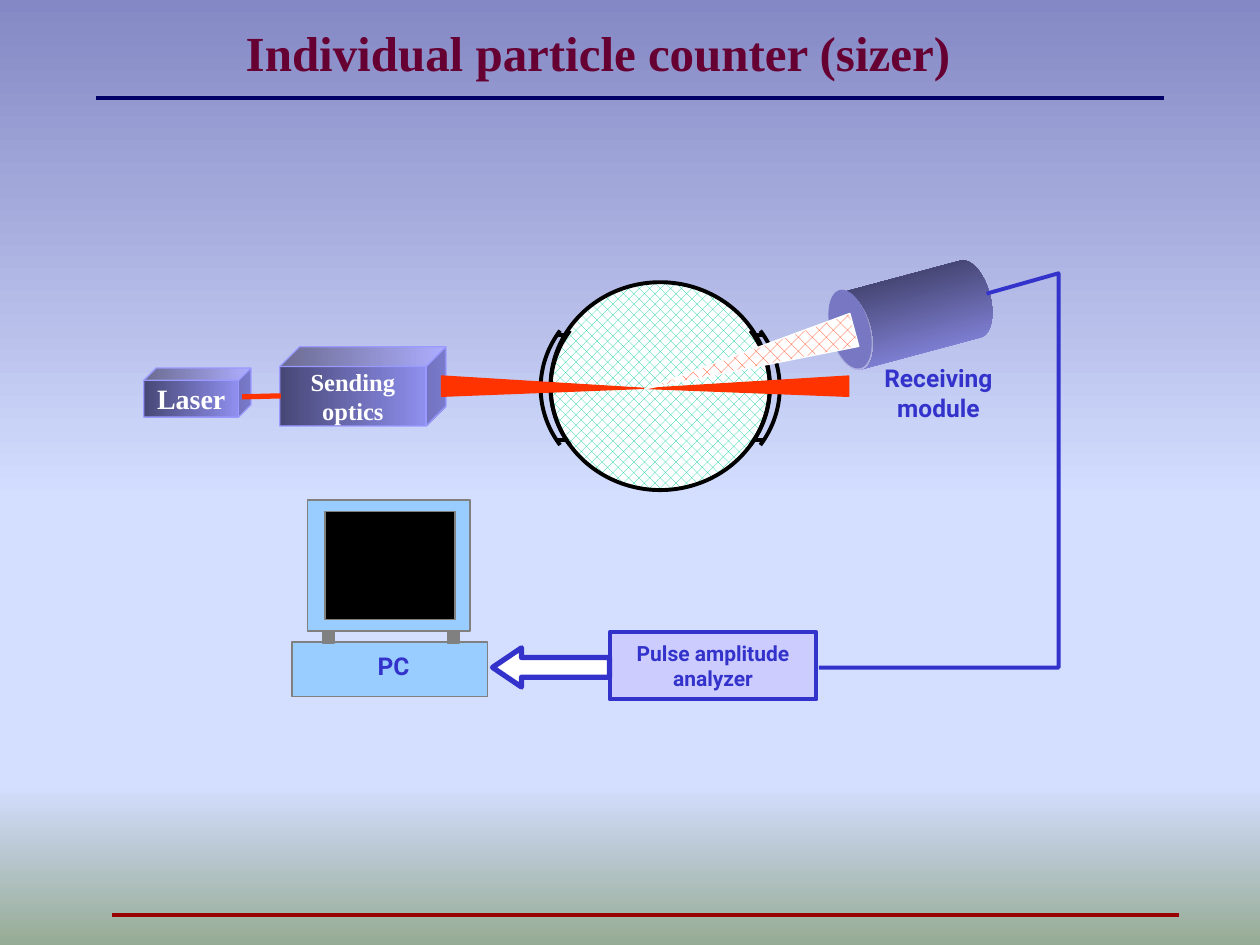
import pptx
import pptx.util
import pptx.dml.color
import pptx.enum.dml
import pptx.enum.shapes
import pptx.enum.text
import pptx.oxml
import pptx.oxml.ns

Cm = pptx.util.Cm
Pt = pptx.util.Pt
RGB = pptx.dml.color.RGBColor
Shape = pptx.enum.shapes.MSO_SHAPE
Pattern = pptx.enum.dml.MSO_PATTERN
Align = pptx.enum.text.PP_ALIGN

BLACK = RGB(0x00, 0x00, 0x00)
WHITE = RGB(0xFF, 0xFF, 0xFF)
NAVY = RGB(0x00, 0x00, 0x66)
MAROON = RGB(0x99, 0x00, 0x00)
WINE = RGB(0x66, 0x00, 0x33)
BLUE = RGB(0x33, 0x33, 0xCC)
LILAC = RGB(0xCC, 0xCC, 0xFF)
VIOLET = RGB(0x99, 0x99, 0xFF)
DUSK = RGB(0x47, 0x47, 0x76)
SLATE = RGB(0x77, 0x77, 0xC4)
SKY = RGB(0x99, 0xCC, 0xFF)
GRAY = RGB(0x80, 0x80, 0x80)
RED = RGB(0xFF, 0x33, 0x00)
GREEN = RGB(0x00, 0xCC, 0x99)
TOP = RGB(0x84, 0x88, 0xC4)
PALE = RGB(0xD4, 0xDE, 0xFF)
MOSS = RGB(0x96, 0xAB, 0x94)
SERIF = "Times New Roman"
SANS = "Roboto"


def fade(fill, root, stops, angle):
    """Give a fill a linear gradient with the (percent, colour) stops."""
    fill.gradient()
    fill.gradient_angle = angle
    group = next(root.iter(pptx.oxml.ns.qn("a:gsLst")))
    for old in list(group):
        group.remove(old)
    for place, color in stops:
        group.append(pptx.oxml.parse_xml(
            f'<a:gs {pptx.oxml.ns.nsdecls("a")} pos="{place * 1000}">'
            f'<a:srgbClr val="{color}"/></a:gs>'))


def hatch(shape, kind, color):
    """Fill a shape with a coloured pattern on white."""
    shape.fill.patterned()
    shape.fill.pattern = Pattern.from_xml(kind)
    shape.fill.fore_color.rgb = color
    shape.fill.back_color.rgb = WHITE


def style(shape, fill, line, width):
    """Set the fill and outline of a shape; None means none."""
    shape.shadow.inherit = False
    if fill is None:
        shape.fill.background()
    else:
        shape.fill.solid()
        shape.fill.fore_color.rgb = fill
    if line is None:
        shape.line.fill.background()
    else:
        shape.line.color.rgb = line
        shape.line.width = Pt(width)


def block(slide, kind, box, fill, line=None, width=0.75, turn=0, adjust=()):
    """Add a preset shape in a box of centimetres."""
    shape = slide.shapes.add_shape(kind, *map(Cm, box))
    style(shape, fill, line, width)
    shape.rotation = turn
    for index, value in enumerate(adjust):
        shape.adjustments[index] = value
    return shape


def rule(slide, start, end, color, width=2.25):
    """Add a straight line without a shadow."""
    line = slide.shapes.add_connector(
        pptx.enum.shapes.MSO_CONNECTOR.STRAIGHT, *map(Cm, start + end))
    line.line.color.rgb = color
    line.line.width = Pt(width)
    line._element.spPr.append(pptx.oxml.parse_xml(
        f'<a:effectLst {pptx.oxml.ns.nsdecls("a")}/>'))


def write(shape, text, size, font, color, wrap=False, align=Align.CENTER):
    """Put bold text in a shape, one paragraph for each line."""
    frame = shape.text_frame
    frame.text = text
    frame.word_wrap = wrap
    frame.vertical_anchor = pptx.enum.text.MSO_ANCHOR.MIDDLE
    for para in frame.paragraphs:
        para.alignment = align
        for run in para.runs:
            run.font.size = Pt(size)
            run.font.name = font
            run.font.bold = True
            run.font.color.rgb = color


def label(slide, box, text):
    """Add a blue text box."""
    write(slide.shapes.add_textbox(*map(Cm, box)), text, 14, SANS, BLUE)


def cube(slide, box, text, size):
    """Add a shaded cube with a caption."""
    shape = block(slide, Shape.CUBE, box, VIOLET, VIOLET, adjust=(0.25,))
    fade(shape.fill, shape._element, ((0, DUSK), (100, VIOLET)), 0)
    write(shape, text, size, SERIF, WHITE)


def title(slide):
    """Place and format the title and the two rules."""
    head = slide.shapes.title
    head.left, head.top, head.width, head.height = map(
        Cm, (4.7, 0.33, 14.76, 1.45))
    write(head, "Individual particle counter (sizer)", 28, SERIF, WINE,
          True, Align.LEFT)
    rule(slide, (1.93, 1.98), (23.47, 1.98), NAVY)
    rule(slide, (2.26, 18.44), (23.77, 18.44), MAROON)


def lens(slide):
    """Draw the measuring cell with a curved window on each side."""
    cell = block(slide, Shape.OVAL, (11.1, 5.69, 4.42, 4.19), WHITE, BLACK, 2.25)
    hatch(cell, "pct40", GREEN)
    for first, last in ((329, 31), (149, 211)):
        for mid in (13.21, 13.41):
            block(slide, Shape.ARC, (mid - 2.31, 5.75, 4.62, 4.14), None, BLACK,
                  2.25, adjust=(first * 0.6, last * 0.6))
    for left in (11.22, 15.22):
        for level in (6.75, 8.87):
            rule(slide, (left, level), (left + 0.18, level), BLACK)


def drum(slide):
    """Draw the receiving cylinder and its front face."""
    body = block(slide, Shape.CAN, (17.56, 4.7, 1.6, 3.3), SLATE,
                 turn=255, adjust=(0.5,))
    fade(body.fill, body._element,
         ((0, VIOLET), (75, DUSK), (100, SLATE)), 0)
    block(slide, Shape.OVAL, (16.74, 5.82, 0.79, 1.63), SLATE, turn=345)


def screen(slide):
    """Draw the computer."""
    for box, fill in (((5.89, 12.95, 3.94, 1.09), SKY),
                      ((6.2, 10.08, 3.28, 2.64), SKY),
                      ((6.55, 10.31, 2.62, 2.18), BLACK),
                      ((6.5, 12.73, 0.23, 0.23), GRAY),
                      ((9.02, 12.73, 0.23, 0.23), GRAY)):
        block(slide, Shape.RECTANGLE, box, fill, GRAY, 1)
    label(slide, (7.34, 13, 1.19, 0.84), "PC")


def beams(slide):
    """Draw the laser beam and the scattered cone."""
    for left, turn, tip in ((10.74, 90, 0.61), (14.86, 270, 0.39)):
        block(slide, Shape.ISOSCELES_TRIANGLE, (left, 5.74, 0.41, 4.09),
              RED, RED, turn=turn, adjust=(tip,))
    cone = block(slide, Shape.ISOSCELES_TRIANGLE, (14.76, 5.03, 0.69, 4.39),
                 WHITE, WHITE, turn=254.8, adjust=(0.44,))
    hatch(cone, "pct25", RED)


def wire(slide, points):
    """Draw an open line through points."""
    start, *rest = [tuple(map(Cm, point)) for point in points]
    pen = slide.shapes.build_freeform(*start)
    pen.add_line_segments(rest, close=False)
    style(pen.convert_to_shape(), None, BLUE, 2.25)


def main():
    """Build the slide and save it."""
    deck = pptx.Presentation()
    deck.slide_width, deck.slide_height = Cm(25.4), Cm(19.05)
    slide = deck.slides.add_slide(deck.slide_layouts[5])
    fade(slide.background.fill, slide.element,
         ((0, TOP), (53, PALE), (83, PALE), (100, MOSS)), 270)
    title(slide)
    drum(slide)
    lens(slide)
    pulse = block(slide, Shape.RECTANGLE, (12.29, 12.75, 4.17, 1.35),
                  LILAC, BLUE, 2.25)
    write(pulse, "Pulse amplitude\nanalyzer", 12, SANS, BLUE, True)
    cube(slide, (5.64, 6.99, 3.35, 1.6), "Sending\noptics", 14)
    cube(slide, (2.9, 7.42, 2.16, 0.99), "Laser", 16)
    rule(slide, (4.88, 8), (5.66, 7.98), RED, 3)
    screen(slide)
    label(slide, (17.5, 7.19, 2.84, 1.45), "Receiving\nmodule")
    beams(slide)
    wire(slide, ((19.89, 5.92), (21.34, 5.51), (21.34, 13.46), (16.51, 13.46)))
    block(slide, Shape.LEFT_ARROW, (9.93, 13.06, 2.36, 0.79), WHITE, BLUE, 3,
          adjust=(0.5, 0.74))
    deck.save("out.pptx")


if __name__ == "__main__":
    main()
